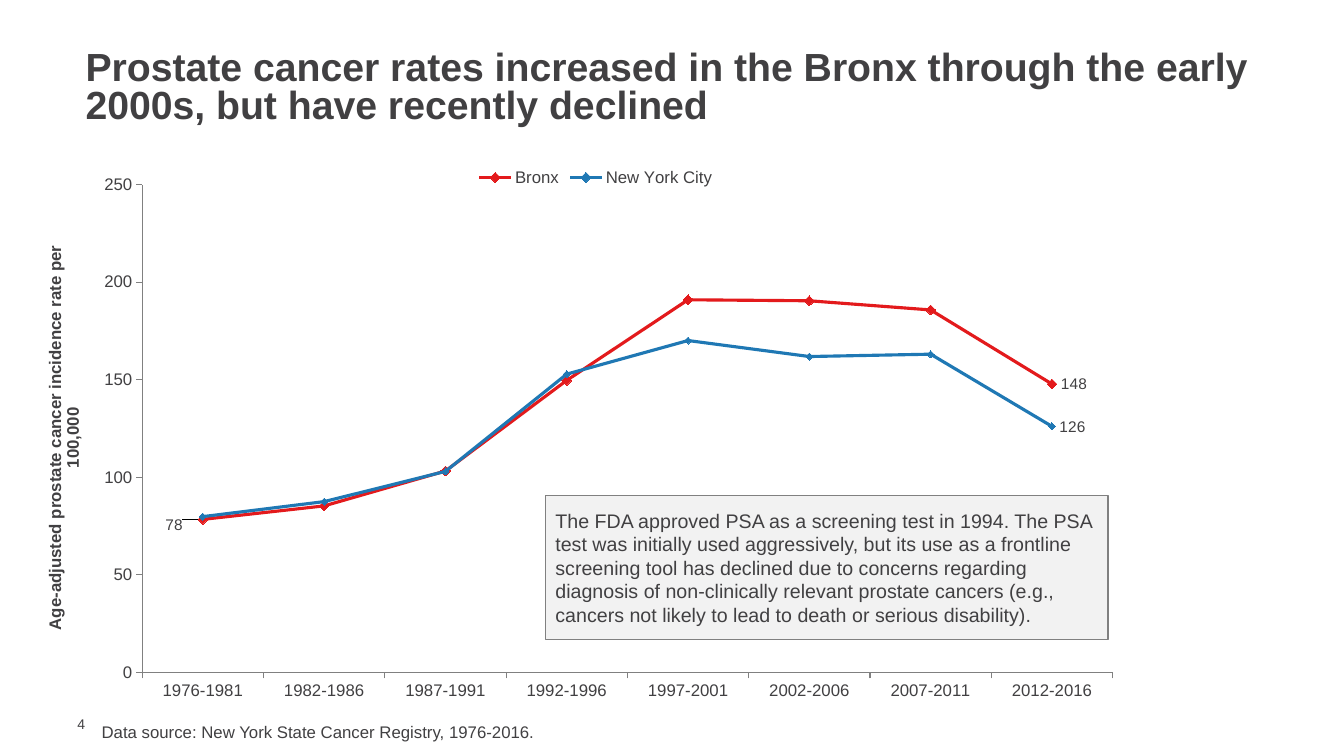
from pptx import Presentation
from pptx.chart.data import CategoryChartData as Data
from pptx.dml.color import RGBColor
from pptx.enum.chart import XL_CHART_TYPE as Kind, XL_LABEL_POSITION as Side
from pptx.enum.chart import XL_LEGEND_POSITION as Place, XL_MARKER_STYLE as Mark
from pptx.enum.chart import XL_TICK_MARK as Tick
from pptx.enum.shapes import MSO_SHAPE as Shape
from pptx.enum.text import MSO_ANCHOR as Anchor, PP_ALIGN as Align
from pptx.oxml import parse_xml
from pptx.oxml.ns import nsdecls
from pptx.util import Inches, Pt

INK = RGBColor(0x41, 0x40, 0x42)
GRAY = RGBColor(0x80, 0x80, 0x80)
PALE = RGBColor(0xF2, 0xF2, 0xF2)
RED = RGBColor(0xE3, 0x1A, 0x1C)
BLUE = RGBColor(0x1F, 0x78, 0xB4)

YEARS = ["1976-1981", "1982-1986", "1987-1991", "1992-1996",
         "1997-2001", "2002-2006", "2007-2011", "2012-2016"]
RATES = [
    ("Bronx", RED, 7, [78.4, 85.3, 103.2, 149.7, 191, 190.5, 185.8, 147.8]),
    ("New York City", BLUE, 5, [79.8, 87.5, 103, 152.9, 170.1, 161.9, 163.1, 126.1]),
]
TITLE = ("Prostate cancer rates increased in the Bronx through the early "
         "2000s, but have recently declined")
NOTE = ("The FDA approved PSA as a screening test in 1994. The PSA test was "
        "initially used aggressively, but its use as a frontline screening tool "
        "has declined due to concerns regarding diagnosis of non-clinically "
        "relevant prostate cancers (e.g., cancers not likely to lead to death "
        "or serious disability).")


def style(font, size, bold=False):
    font.name = "Arial"
    font.size = Pt(size)
    font.bold = bold
    font.color.rgb = INK


def write(shape, text, size, bold=False, anchor=Anchor.MIDDLE):
    frame = shape.text_frame
    frame.word_wrap = True
    frame.vertical_anchor = anchor
    frame.text = text
    para = frame.paragraphs[0]
    para.alignment = Align.LEFT
    style(para.runs[0].font, size, bold)
    return frame


def add_text(slide, box, *args, **opts):
    shape = slide.shapes.add_textbox(*map(Inches, box))
    return write(shape, *args, **opts)


def add_note(slide, box, text):
    shape = slide.shapes.add_shape(Shape.RECTANGLE, *map(Inches, box))
    shape.shadow.inherit = False
    shape.fill.solid()
    shape.fill.fore_color.rgb = PALE
    shape.line.color.rgb = GRAY
    shape.line.width = Pt(0.75)
    write(shape, text, 14)


def layout(x, y, size=None):
    extra = {"xMode": "edge", "yMode": "edge"} if size else {}
    if size:
        extra = {"layoutTarget": "inner", **extra}
    vals = {**extra, "x": x, "y": y}
    if size:
        vals.update(w=size[0], h=size[1])
    body = "".join(f'<c:{key} val="{val}"/>' for key, val in vals.items())
    return parse_xml(f'<c:layout {nsdecls("c")}><c:manualLayout>{body}'
                     '</c:manualLayout></c:layout>')


def style_axis(axis):
    axis.has_major_gridlines = False
    axis.major_tick_mark = Tick.OUTSIDE
    axis.minor_tick_mark = Tick.NONE
    axis.format.line.color.rgb = GRAY
    axis.format.line.width = Pt(0.75)
    style(axis.tick_labels.font, 12)


def style_line(line, color, size):
    line.smooth = False
    line.format.line.color.rgb = color
    line.format.line.width = Pt(2.25)
    line.marker.style = Mark.DIAMOND
    line.marker.size = size
    line.marker.format.fill.solid()
    line.marker.format.fill.fore_color.rgb = color
    line.marker.format.line.color.rgb = color


def add_label(line, index, side):
    label = line.points[index].data_label
    style(label.font, 11)
    label.position = side


def add_rates(slide, box):
    data = Data(number_format="0")
    data.categories = YEARS
    for name, color, size, vals in RATES:
        data.add_series(name, vals)
    chart = slide.shapes.add_chart(Kind.LINE_MARKERS, *map(Inches, box), data).chart
    chart.has_title = False
    style(chart.font, 10)
    chart.has_legend = True
    chart.legend.position = Place.TOP
    chart.legend.include_in_layout = False
    style(chart.legend.font, 12)

    axis = chart.value_axis
    style_axis(chart.category_axis)
    style_axis(axis)
    axis.minimum_scale = 0
    axis.maximum_scale = 250
    axis.major_unit = 50
    axis.tick_labels.number_format = "0"
    axis.tick_labels.number_format_is_linked = False
    frame = axis.axis_title.text_frame
    frame.text = "Age-adjusted prostate cancer incidence rate per 100,000"
    style(frame.paragraphs[0].runs[0].font, 12, True)
    for body in chart.element.xpath(".//c:valAx/c:title//a:bodyPr"):
        body.set("rot", "-5400000")
        body.set("vert", "horz")

    plot = chart.plots[0]
    plot.vary_by_categories = False
    for line, (name, color, size, vals) in zip(plot.series, RATES):
        style_line(line, color, size)
        add_label(line, len(YEARS) - 1, Side.RIGHT)
    add_label(plot.series[0], 0, Side.LEFT)
    first = chart.element.xpath(".//c:dLbl[c:idx/@val='0']")[0]
    first.insert(1, layout(-0.01, 0.01))

    area = chart.element.xpath(".//c:plotArea")[0]
    for old in area.xpath("./c:layout"):
        area.remove(old)
    area.insert(0, layout(0.091, 0.049, (0.875, 0.867)))


def main():
    deck = Presentation()
    deck.slide_width = Inches(13.33)
    deck.slide_height = Inches(7.5)
    slide = deck.slides.add_slide(deck.slide_layouts[6])
    page = add_text(slide, (0.67, 7.1, 0.43, 0.17), "4", 10)
    page.margin_top = page.margin_bottom = page.margin_right = 0
    add_text(slide, (0.91, 7.11, 9.92, 0.3),
             "Data source: New York State Cancer Registry, 1976-2016.", 12,
             anchor=Anchor.TOP)
    title = add_text(slide, (0.75, 0.45, 11.83, 0.87), TITLE, 28, bold=True)
    title.paragraphs[0].line_spacing = 0.8
    add_rates(slide, (0.41, 1.56, 11, 5.58))
    add_note(slide, (5.41, 4.92, 5.58, 1.42), NOTE)
    deck.save("out.pptx")


if __name__ == "__main__":
    main()
